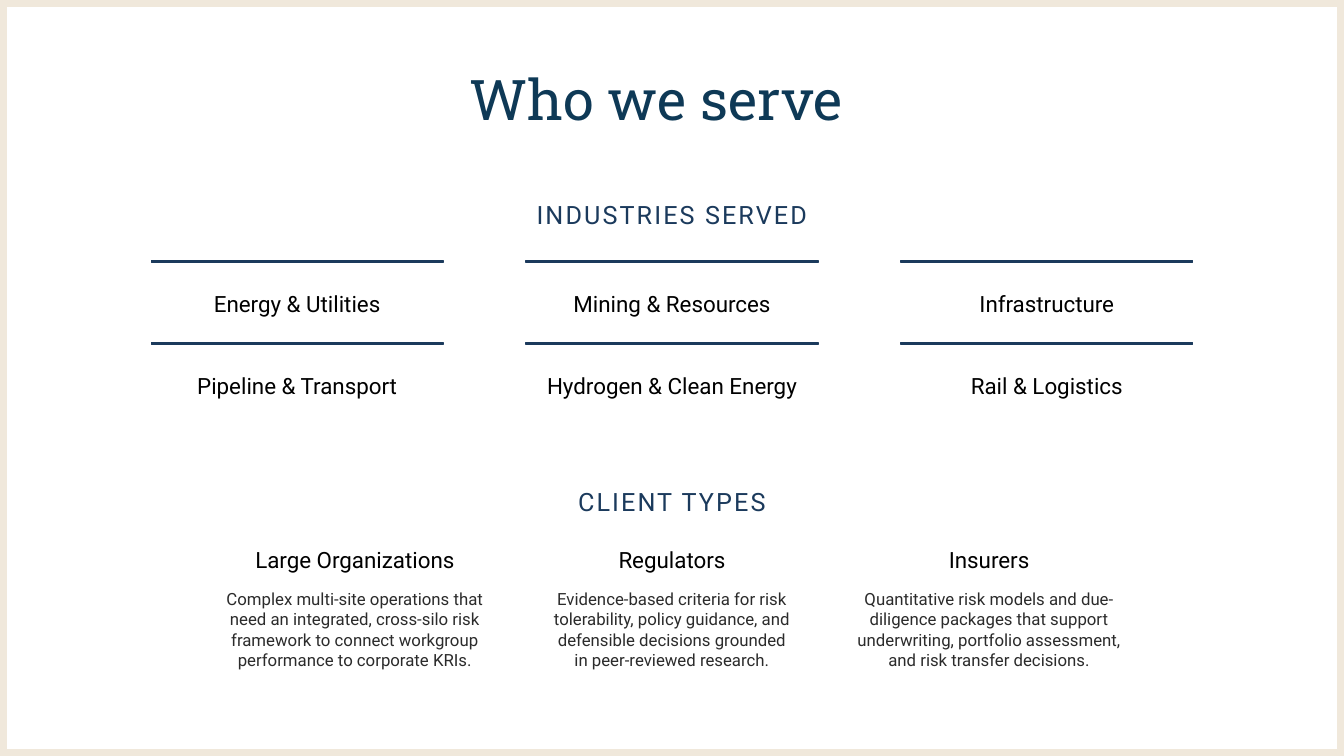
"""Build the "Who we serve" slide."""
from dataclasses import dataclass

from pptx import Presentation
from pptx.dml.color import RGBColor
from pptx.enum.shapes import MSO_SHAPE
from pptx.enum.text import MSO_ANCHOR, PP_ALIGN
from pptx.shapes.autoshape import Shape
from pptx.slide import Slide
from pptx.util import Emu, Pt

EMU_PER_PX = 9525
SLIDE_WIDTH, SLIDE_HEIGHT = 1280, 720
CENTER = SLIDE_WIDTH // 2


@dataclass(frozen=True)
class TextStyle:
    size: int
    color: str
    font: str = "Roboto"
    anchor: MSO_ANCHOR = MSO_ANCHOR.MIDDLE
    inset: int = 0
    tracking: int = 0
    line_spacing: float = 1.0


@dataclass(frozen=True)
class Theme:
    background: str = "FFFFFF"
    frame: str = "F0E8DB"
    frame_width: int = 10
    bar: str = "1B3A5C"
    bar_width: int = 1
    title: TextStyle = TextStyle(40, "0E3956", "Roboto Slab", line_spacing=0.9)
    heading: TextStyle = TextStyle(18, "1B3A5C", tracking=150)
    industry: TextStyle = TextStyle(16, "000000", inset=6)
    client: TextStyle = TextStyle(16, "000000")
    detail: TextStyle = TextStyle(12, "2B2B2B", anchor=MSO_ANCHOR.TOP)


@dataclass(frozen=True)
class Box:
    left: int
    top: int
    width: int
    height: int

    def emu(self) -> tuple[Emu, ...]:
        return tuple(Emu(length * EMU_PER_PX)
                     for length in (self.left, self.top, self.width, self.height))


@dataclass(frozen=True)
class Client:
    name: str
    detail: str
    detail_width: int
    detail_height: int


THEME = Theme()

HEADINGS = {"INDUSTRIES SERVED": 191, "CLIENT TYPES": 464}

INDUSTRIES = (
    ("Energy & Utilities", "Mining & Resources", "Infrastructure"),
    ("Pipeline & Transport", "Hydrogen & Clean Energy", "Rail & Logistics"),
)

CLIENTS = (
    Client("Large Organizations",
           "Complex multi-site operations that need an integrated, cross-silo risk "
           "framework to connect workgroup performance to corporate KRIs.", 256, 61),
    Client("Regulators",
           "Evidence-based criteria for risk tolerability, policy guidance, and "
           "defensible decisions grounded in peer-reviewed research.", 232, 49),
    Client("Insurers",
           "Quantitative risk models and due-diligence packages that support "
           "underwriting, portfolio assessment, and risk transfer decisions.", 256, 61),
)


def centered_box(center: int, top: int, width: int, height: int) -> Box:
    return Box(center - width // 2, top, width, height)


def add_text(slide: Slide, box: Box, text: str, style: TextStyle) -> None:
    frame = slide.shapes.add_textbox(*box.emu()).text_frame
    frame.word_wrap = True
    frame.vertical_anchor = style.anchor
    inset = Emu(style.inset * EMU_PER_PX)
    frame.margin_left = frame.margin_right = inset
    frame.margin_top = frame.margin_bottom = inset
    paragraph = frame.paragraphs[0]
    paragraph.alignment = PP_ALIGN.CENTER
    paragraph.line_spacing = style.line_spacing
    run = paragraph.add_run()
    run.text = text
    run.font.name = style.font
    run.font.size = Pt(style.size)
    run.font.color.rgb = RGBColor.from_string(style.color)
    if style.tracking:
        run.font._element.set("spc", str(style.tracking))


def add_rectangle(slide: Slide, box: Box, line_color: str, line_width: int) -> Shape:
    shape = slide.shapes.add_shape(MSO_SHAPE.RECTANGLE, *box.emu())
    shape.shadow.inherit = False
    shape.fill.background()
    shape.line.color.rgb = RGBColor.from_string(line_color)
    shape.line.width = Pt(line_width)
    return shape


def add_industry(slide: Slide, row: int, column: int, name: str) -> None:
    left, top, width = 144 + column * 357, 248 + row * 78, 278
    bar = add_rectangle(slide, Box(left, top, width, 2), THEME.bar, THEME.bar_width)
    bar.fill.solid()
    bar.fill.fore_color.rgb = RGBColor.from_string(THEME.bar)
    add_text(slide, Box(left, top + 14, width, 54), name, THEME.industry)


def add_client(slide: Slide, column: int, client: Client) -> None:
    center = CENTER + (column - 1) * 302
    add_text(slide, centered_box(center, 520, 260, 25), client.name, THEME.client)
    detail_box = centered_box(center, 561, client.detail_width, client.detail_height)
    add_text(slide, detail_box, client.detail, THEME.detail)


def main() -> None:
    presentation = Presentation()
    presentation.slide_width = Emu(SLIDE_WIDTH * EMU_PER_PX)
    presentation.slide_height = Emu(SLIDE_HEIGHT * EMU_PER_PX)
    slide = presentation.slides.add_slide(presentation.slide_layouts[6])
    slide.background.fill.solid()
    slide.background.fill.fore_color.rgb = RGBColor.from_string(THEME.background)

    add_rectangle(slide, Box(0, 0, SLIDE_WIDTH, SLIDE_HEIGHT), THEME.frame, THEME.frame_width)
    add_text(slide, Box(107, 20, 1036, 154), "Who we serve", THEME.title)
    for heading, top in HEADINGS.items():
        add_text(slide, centered_box(CENTER, top, 882, 27), heading, THEME.heading)
    for row, names in enumerate(INDUSTRIES):
        for column, name in enumerate(names):
            add_industry(slide, row, column, name)
    for column, client in enumerate(CLIENTS):
        add_client(slide, column, client)

    presentation.save("out.pptx")


if __name__ == "__main__":
    main()
